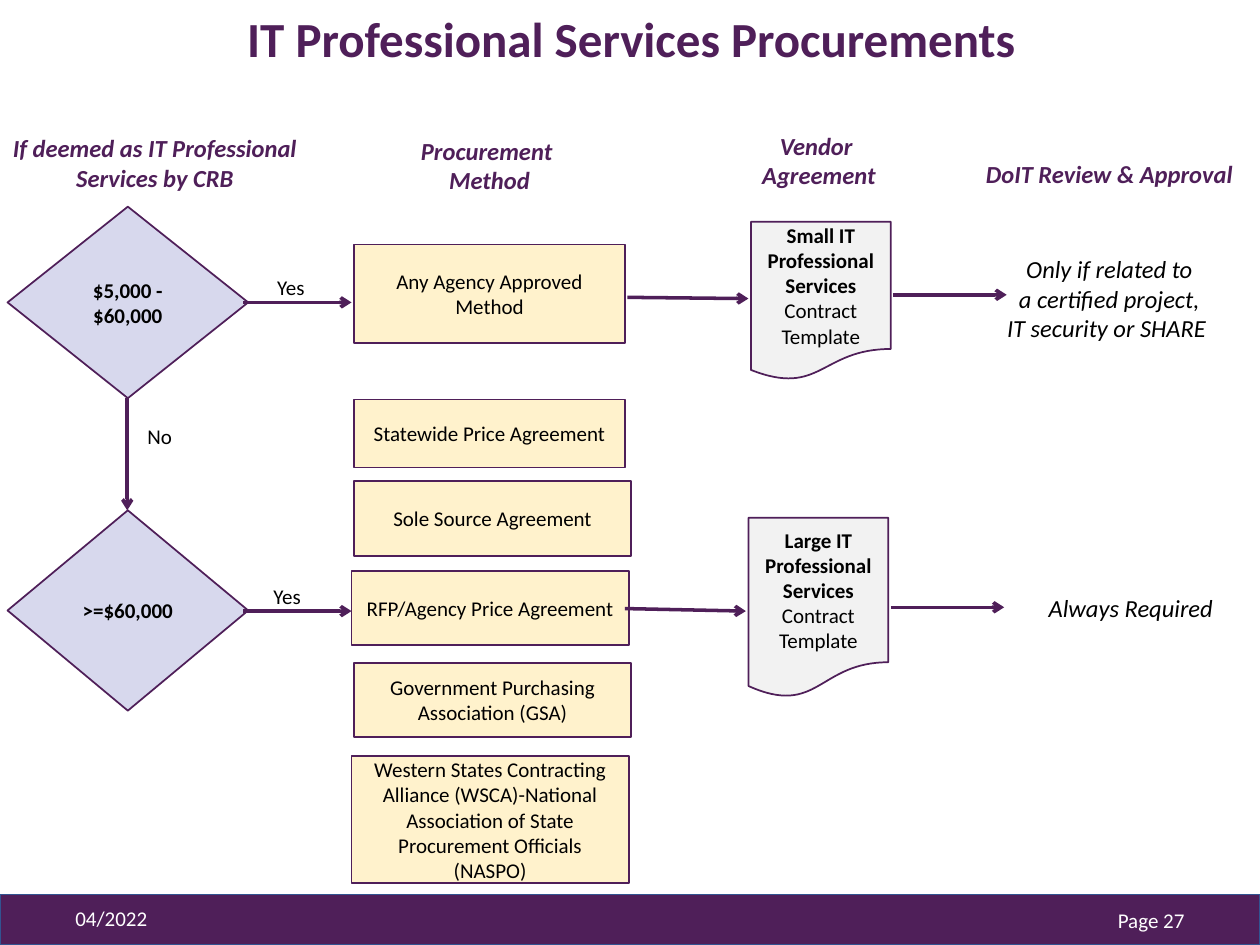
import pptx
import pptx.dml.color
import pptx.enum.shapes
import pptx.enum.text
import pptx.oxml
import pptx.oxml.ns
import pptx.util

SHAPE = pptx.enum.shapes.MSO_SHAPE
ALIGN = pptx.enum.text.PP_ALIGN
ANCHOR = pptx.enum.text.MSO_ANCHOR
COLUMNS, ROWS = 100, 75
CELL = pptx.util.Inches(0.1)
COLORS = {
    "plum": "4F1F59", "plum edge": "325491", "lilac": "D7D8ED", "cream": "FFF2CC",
    "paper": "F2F2F2", "ink": "000000", "white": "FFFFFF",
}
FORMATS = {
    "title": {"size": 28, "bold": True, "italic": False, "color": "plum"},
    "heading": {"size": 14, "bold": True, "italic": True, "color": "plum"},
    "review": {"size": 14, "bold": False, "italic": True, "color": "ink"},
    "strong": {"size": 12, "bold": True, "italic": False, "color": "ink"},
    "plain": {"size": 12, "bold": False, "italic": False, "color": "ink"},
    "footer": {"size": 12, "bold": False, "italic": False, "color": "white"},
}
LABEL_INSETS = {"margin_left": 0.04, "margin_top": 0.03, "margin_right": 0, "margin_bottom": 0}


def rgb(name):
    """Return the palette colour with this name."""
    return pptx.dml.color.RGBColor.from_string(COLORS[name])


def place(box, column, row, width, height):
    """Turn grid cells relative to a box into slide lengths."""
    cells = (box[0] + column, box[1] + row, width, height)
    return [round(cell * CELL) for cell in cells]


def write(frame, paragraphs, align=ALIGN.CENTER, anchor=ANCHOR.TOP):
    """Fill a text frame with paragraphs of (text, format) runs."""
    settings = {"word_wrap": True, "vertical_anchor": anchor,
                "auto_size": pptx.enum.text.MSO_AUTO_SIZE.NONE}
    for key, value in settings.items():
        setattr(frame, key, value)
    for index, pieces in enumerate(paragraphs):
        paragraph = frame.add_paragraph() if index else frame.paragraphs[0]
        paragraph.alignment = align
        for words, style in pieces:
            run = paragraph.add_run()
            run.text = words
            values = dict(FORMATS[style], name="Calibri")
            run.font.color.rgb = rgb(values.pop("color"))
            values["size"] = pptx.util.Pt(values["size"])
            for key, value in values.items():
                setattr(run.font, key, value)


def add_words(slide, area, lines, style, **layout):
    """Add a text box with one paragraph for each line."""
    words = slide.shapes.add_textbox(*area)
    write(words.text_frame, [[(line, style)] for line in lines], **layout)
    return words


def add_step(slide, outline, area, fill, pieces=(), edge="plum"):
    """Add a filled and outlined flowchart step."""
    step = slide.shapes.add_shape(outline, *area)
    step.shadow.inherit = False
    step.fill.solid()
    step.fill.fore_color.rgb = rgb(fill)
    step.line.color.rgb = rgb(edge)
    step.line.width = pptx.util.Pt(1)
    if pieces:
        write(step.text_frame, [pieces], anchor=ANCHOR.MIDDLE)


def add_arrow(slide, box, start, end):
    """Draw an arrow between two grid points relative to a box."""
    ends = [round((box[axis] + point[axis]) * CELL) for point in (start, end) for axis in (0, 1)]
    arrow = slide.shapes.add_connector(pptx.enum.shapes.MSO_CONNECTOR.STRAIGHT, *ends)
    arrow.line.color.rgb = rgb("plum")
    arrow.line.width = pptx.util.Pt(2)
    line = arrow.line._get_or_add_ln()
    pptx.oxml.xmlchemy.OxmlElement("a:tailEnd")
    head = line.makeelement(pptx.oxml.ns.qn("a:tailEnd"), {"type": "arrow"})
    line.append(head)
    properties = arrow._element.spPr
    properties.append(properties.makeelement(pptx.oxml.ns.qn("a:effectLst"), {}))


def add_answer(slide, box, column, row, answer):
    """Label a decision arrow with its answer."""
    label = add_words(slide, place(box, column, row, 3.9, 2.1), [answer], "plain", align=ALIGN.LEFT)
    for key, value in LABEL_INSETS.items():
        setattr(label.text_frame, key, pptx.util.Inches(value))


def title_region(slide, box):
    """Put the slide title into its placeholder."""
    title = slide.shapes.title
    area = place(box, 0, 0, 90, 5.3)
    for key, value in zip(("left", "top", "width", "height"), area):
        setattr(title, key, value)
    write(title.text_frame, [[("IT Professional Services Procurements", "title")]])


def headings_region(slide, box):
    """Write the heading above each column of the flowchart."""
    headings = [
        (0, 0.2, 24.6, ["If deemed as IT Professional Services by CRB"]),
        (28.8, 0.4, 20.1, ["Procurement ", "Method"]),
        (56.4, 0, 17.2, ["Vendor ", "Agreement"]),
        (77.2, 2.2, 21.7, ["DoIT Review & Approval "]),
    ]
    for column, row, width, lines in headings:
        add_words(slide, place(box, column, row, width, 5.7), lines, "heading")


def decisions_region(slide, box):
    """Draw the two price decisions and their answers."""
    decisions = [("$5,000 - $60,000", 0, 15.2, 7.6, 21, 5.1),
                 (">=$60,000", 24.1, 15.9, 32.1, 20.7, 29.6)]
    for price, row, height, arrow_row, label_column, label_row in decisions:
        add_step(slide, SHAPE.DIAMOND, place(box, 0, row, 19.1, height), "lilac",
                 [(price, "strong")])
        add_arrow(slide, box, (18.7, arrow_row), (27.3, arrow_row))
        add_answer(slide, box, label_column, label_row, "Yes")
    add_arrow(slide, box, (9.5, 15.2), (9.5, 24.1))
    add_answer(slide, box, 10.7, 16.9, "No")


def methods_region(slide, box):
    """Stack the procurement methods."""
    methods = [
        (0.2, 0, 21.5, 7.8, "Any Agency Approved Method"),
        (0.2, 12.3, 21.5, 5.4, "Statewide Price Agreement"),
        (0.2, 18.8, 22, 5.9, "Sole Source Agreement"),
        (0, 25.9, 22, 5.9, "RFP/Agency Price Agreement"),
        (0.2, 33.2, 22, 5.9, "Government Purchasing Association (GSA)"),
        (0, 40.6, 22, 10.1, "Western States Contracting Alliance (WSCA)-National "
                            "Association of State Procurement Officials (NASPO)"),
    ]
    for column, row, width, height, method in methods:
        add_step(slide, SHAPE.RECTANGLE, place(box, column, row, width, height), "cream",
                 [(method, "plain")])


def agreement_region(slide, box, contract_size, height, arrow_rows, review, review_area):
    """Draw a vendor agreement, its arrows and the review it needs."""
    add_step(slide, SHAPE.FLOWCHART_DOCUMENT, place(box, 0, 0, 11.1, height), "paper",
             [(f"{contract_size} IT Professional Services ", "strong"),
              ("Contract Template", "plain")])
    start, end, onward = arrow_rows
    add_arrow(slide, box, (-9.8, start), (-0.2, end))
    add_arrow(slide, box, (11.3, onward), (20.3, onward))
    add_words(slide, place(box, *review_area), review, "review")


def footer_region(slide, box):
    """Draw the footer band with date and page number."""
    add_step(slide, SHAPE.RECTANGLE, place(box, 0, 0, COLUMNS, 4), "plum", edge="plum edge")
    entries = [(5, -0.1, "04/2022", ALIGN.LEFT), (71.7, 0, "Page 27", ALIGN.RIGHT)]
    for column, row, entry, align in entries:
        add_words(slide, place(box, column, row, 23.3, 4), [entry], "footer",
                  align=align, anchor=ANCHOR.MIDDLE)


def main():
    """Build the procurement flowchart slide."""
    deck = pptx.Presentation()
    deck.slide_width, deck.slide_height = COLUMNS * CELL, ROWS * CELL
    slide = deck.slides.add_slide(deck.slide_layouts[5])
    footer_region(slide, (0, 71))
    title_region(slide, (5.1, 0.2))
    headings_region(slide, (0, 9.9))
    decisions_region(slide, (0.6, 16.4))
    methods_region(slide, (27.9, 19.4))
    agreement_region(slide, (59.6, 17.6), "Small", 12.6, (6, 6.1, 5.8),
                     ["Only if related to", " a certified project, ",
                      "IT security or SHARE "], (16.5, 2.1, 23.9, 8.1))
    agreement_region(slide, (59.4, 41.1), "Large", 14.3, (7.2, 7.4, 7.1),
                     ["Always Required"], (20.3, 5.5, 20.1, 3.4))
    deck.save("out.pptx")


if __name__ == "__main__":
    main()
